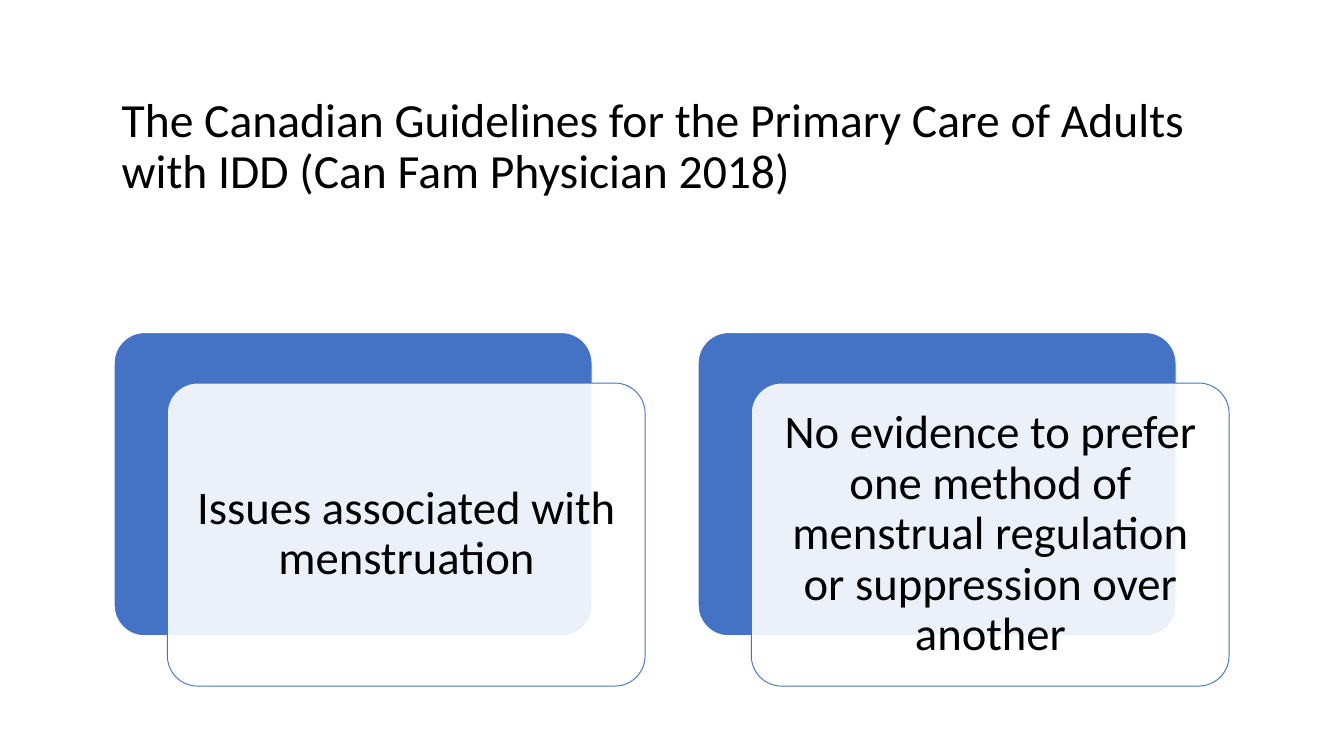
from pptx import Presentation
from pptx.dml.color import RGBColor
from pptx.enum.shapes import MSO_SHAPE
from pptx.enum.text import MSO_ANCHOR, MSO_AUTO_SIZE, PP_ALIGN
from pptx.oxml.ns import qn
from pptx.util import Inches, Pt
from lxml.etree import SubElement


def color(hex_string):
    return RGBColor.from_string(hex_string)


class GuidelineSlide:
    """Style and drawing methods for the guideline slide."""

    FONT = "Calibri"
    INK = "000000"
    BLUE = "4472C4"
    WHITE = "FFFFFF"

    def __init__(self, slide):
        self.slide = slide

    def set_wording(self, holder, wording, size, align, anchor, inset):
        frame = holder.text_frame
        frame.text = wording
        frame.word_wrap = True
        frame.auto_size = MSO_AUTO_SIZE.NONE
        frame.vertical_anchor = anchor
        frame.margin_left = frame.margin_right = Inches(inset)
        frame.margin_top = frame.margin_bottom = Inches(inset)
        for paragraph in frame.paragraphs:
            paragraph.alignment = align
            paragraph.line_spacing = 0.9
            for run in paragraph.runs:
                run.font.name = self.FONT
                run.font.size = Pt(size)
                run.font.color.rgb = color(self.INK)

    def title(self, wording, left, top, width, height):
        heading = self.slide.shapes.title
        heading.left, heading.top = Inches(left), Inches(top)
        heading.width, heading.height = Inches(width), Inches(height)
        self.set_wording(heading, wording, 51, PP_ALIGN.LEFT, MSO_ANCHOR.TOP, 0.1)

    def panel(self, left, top, fill, line, opacity=100):
        panel = self.slide.shapes.add_shape(
            MSO_SHAPE.ROUNDED_RECTANGLE,
            Inches(left), Inches(top), Inches(7.11), Inches(4.51))
        panel.adjustments[0] = 0.1
        panel.shadow.inherit = False
        panel.fill.solid()
        panel.fill.fore_color.rgb = color(fill)
        panel.line.color.rgb = color(line)
        panel.line.width = Pt(1)
        if opacity < 100:
            fill_color = panel.element.spPr.find(qn("a:solidFill"))[0]
            SubElement(fill_color, qn("a:alpha")).set("val", str(opacity * 1000))

    def card(self, wording, left, top):
        self.panel(left, top, self.BLUE, self.WHITE)
        self.panel(left + 0.79, top + 0.75, self.WHITE, self.BLUE, opacity=90)
        statement = self.slide.shapes.add_textbox(
            Inches(left + 0.93), Inches(top + 0.88), Inches(6.84), Inches(4.25))
        self.set_wording(
            statement, wording, 50, PP_ALIGN.CENTER, MSO_ANCHOR.MIDDLE, 0.21)


def main():
    deck = Presentation()
    deck.slide_width, deck.slide_height = Inches(20), Inches(11.25)
    guideline = GuidelineSlide(deck.slides.add_slide(deck.slide_layouts[5]))
    guideline.title(
        "The Canadian Guidelines for the Primary Care of Adults with IDD "
        "(Can Fam Physician 2018)", 1.71, 1.33, 16.69, 2.55)
    statements = (
        "Issues associated with menstruation",
        "No evidence to prefer one method of menstrual regulation "
        "or suppression over another",
    )
    for column, statement in enumerate(statements):
        guideline.card(statement, 1.7 + column * 8.69, 4.95)
    deck.save("out.pptx")


if __name__ == "__main__":
    main()
